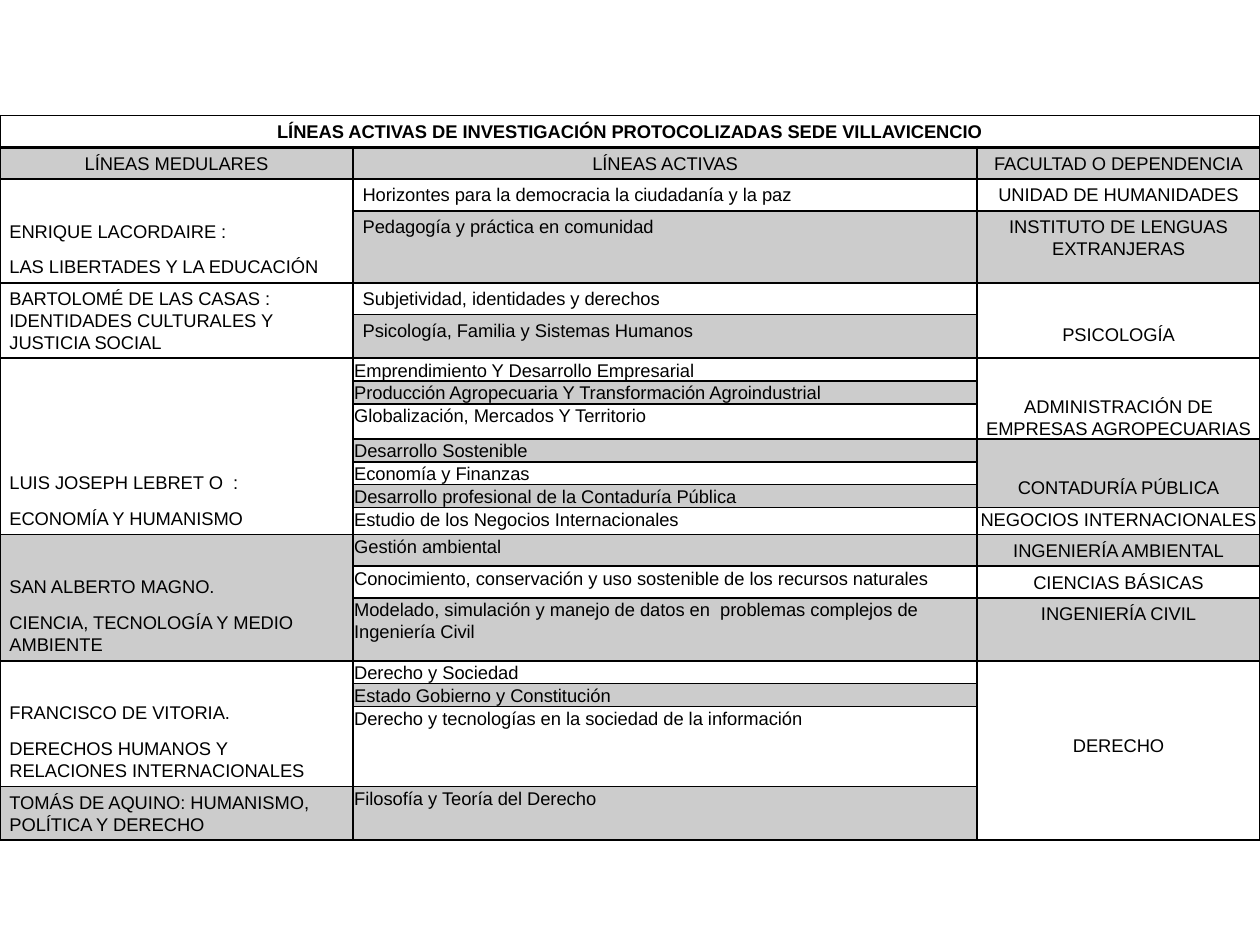
from lxml import etree
from pptx import Presentation
from pptx.dml.color import RGBColor
from pptx.enum import text
from pptx.oxml.ns import qn
from pptx.util import Cm, Pt

THEME = dict(font="Arial", size=10.5, ink="000000", shade_alpha=20,
             line_spacing=1.07, gap=8, rule=1, heavy_rule=2)
WIDE, NARROW = (0.19, 0.1), (0.02, 0.02)
SKIPPED_LINE = 0.73

TITLE = "LÍNEAS ACTIVAS DE INVESTIGACIÓN PROTOCOLIZADAS SEDE VILLAVICENCIO"
WIDTHS = [7.12, 12.58, 5.7]
HEIGHTS = [0.64, 0.61, 0.61, 1.44, 0.61, 0.88, 0.46, 0.46, 0.69, 0.46,
           0.46, 0.46, 0.51, 0.62, 0.61, 1.27, 0.46, 0.45, 1.6, 1.07]

# rows spanned, lines skipped above the text, margins, paragraphs
MEDULARES = [
    (1, 0, WIDE, ["LÍNEAS MEDULARES"]),
    (2, 1, WIDE, ["ENRIQUE LACORDAIRE :", "LAS LIBERTADES Y LA EDUCACIÓN"]),
    (2, 0, WIDE, ["BARTOLOMÉ DE LAS CASAS : IDENTIDADES CULTURALES Y JUSTICIA SOCIAL"]),
    (7, 3, WIDE, ["LUIS JOSEPH LEBRET O  :", "ECONOMÍA Y HUMANISMO"]),
    (3, 1, WIDE, ["SAN ALBERTO MAGNO.", "CIENCIA, TECNOLOGÍA Y MEDIO AMBIENTE"]),
    (3, 1, WIDE, ["FRANCISCO DE VITORIA.", "DERECHOS HUMANOS Y RELACIONES INTERNACIONALES"]),
    (1, 0, WIDE, ["TOMÁS DE AQUINO: HUMANISMO, POLÍTICA Y DERECHO"]),
]
ACTIVAS = [(1, 0, WIDE, [linea]) for linea in (
    "LÍNEAS ACTIVAS",
    "Horizontes para la democracia la ciudadanía y la paz",
    "Pedagogía y práctica en comunidad",
    "Subjetividad, identidades y derechos",
    "Psicología, Familia y Sistemas Humanos",
)] + [(1, 0, NARROW, [linea]) for linea in (
    "Emprendimiento Y Desarrollo Empresarial",
    "Producción Agropecuaria Y Transformación Agroindustrial",
    "Globalización, Mercados Y Territorio",
    "Desarrollo Sostenible",
    "Economía y Finanzas",
    "Desarrollo profesional de la Contaduría Pública",
    "Estudio de los Negocios Internacionales",
    "Gestión ambiental",
    "Conocimiento, conservación y uso sostenible de los recursos naturales",
    "Modelado, simulación y manejo de datos en  problemas complejos de Ingeniería Civil",
    "Derecho y Sociedad",
    "Estado Gobierno y Constitución",
    "Derecho y tecnologías en la sociedad de la información",
    "Filosofía y Teoría del Derecho",
)]
FACULTADES = [
    (1, 0, WIDE, ["FACULTAD O DEPENDENCIA"]),
    (1, 0, WIDE, ["UNIDAD DE HUMANIDADES"]),
    (1, 0, WIDE, ["INSTITUTO DE LENGUAS EXTRANJERAS"]),
    (2, 1, WIDE, ["PSICOLOGÍA"]),
    (3, 1, NARROW, ["ADMINISTRACIÓN DE EMPRESAS AGROPECUARIAS"]),
    (3, 1, NARROW, ["CONTADURÍA PÚBLICA"]),
    (1, 0, NARROW, ["NEGOCIOS INTERNACIONALES"]),
    (1, 0, WIDE, ["INGENIERÍA AMBIENTAL"]),
    (1, 0, WIDE, ["CIENCIAS BÁSICAS"]),
    (1, 0, WIDE, ["INGENIERÍA CIVIL"]),
    (4, 2, NARROW, ["DERECHO"]),
]


def write(cell, paragraphs, centered=False, bold=False, margins=WIDE, skipped=0):
    side, top = margins
    cell.margin_left = cell.margin_right = Cm(side)
    cell.margin_top = Cm(top + skipped * SKIPPED_LINE)
    cell.margin_bottom = Cm(0.1 if margins == WIDE else 0)
    cell.vertical_anchor = text.MSO_ANCHOR.TOP
    for index, words in enumerate(paragraphs):
        frame = cell.text_frame
        paragraph = frame.add_paragraph() if index else frame.paragraphs[0]
        paragraph.alignment = text.PP_ALIGN.CENTER if centered else text.PP_ALIGN.LEFT
        paragraph.line_spacing = THEME["line_spacing"]
        if index:
            paragraph.space_before = Pt(THEME["gap"])
        run = paragraph.add_run()
        run.text = words
        run.font.name = THEME["font"]
        run.font.size = Pt(THEME["size"])
        run.font.bold = bold
        run.font.color.rgb = RGBColor.from_string(THEME["ink"])


def rule_and_shade(cell, row):
    properties = cell._tc.get_or_add_tcPr()
    for edge in ("lnL", "lnR", "lnT", "lnB"):
        heavy = (row, edge) in ((0, "lnB"), (1, "lnT"))
        width = THEME["heavy_rule"] if heavy else THEME["rule"]
        line = etree.SubElement(properties, qn("a:" + edge), w=str(Pt(width)))
        paint = etree.SubElement(line, qn("a:solidFill"))
        etree.SubElement(paint, qn("a:srgbClr"), val=THEME["ink"])
    if row % 2:
        cell.fill.solid()
        cell.fill.fore_color.rgb = RGBColor.from_string(THEME["ink"])
        color = properties.find(qn("a:solidFill")).find(qn("a:srgbClr"))
        etree.SubElement(color, qn("a:alpha"), val=str(THEME["shade_alpha"] * 1000))
    else:
        cell.fill.background()


def main():
    deck = Presentation()
    deck.slide_width, deck.slide_height = Cm(25.4), Cm(19.05)
    slide = deck.slides.add_slide(deck.slide_layouts[6])
    table = slide.shapes.add_table(len(HEIGHTS), len(WIDTHS), Cm(0), Cm(2.33),
                                   Cm(sum(WIDTHS)), Cm(sum(HEIGHTS))).table
    table.first_row = table.horz_banding = False
    for column, width in zip(table.columns, WIDTHS):
        column.width = Cm(width)
    for row, height in zip(table.rows, HEIGHTS):
        row.height = Cm(height)

    table.cell(0, 0).merge(table.cell(0, 2))
    write(table.cell(0, 0), [TITLE], centered=True, bold=True)
    for column in range(len(WIDTHS)):
        rule_and_shade(table.cell(0, column), 0)

    for column, entries in enumerate((MEDULARES, ACTIVAS, FACULTADES)):
        start = 1
        for span, skipped, margins, paragraphs in entries:
            cell = table.cell(start, column)
            if span > 1:
                cell.merge(table.cell(start + span - 1, column))
            write(cell, paragraphs, centered=start == 1 or column == 2,
                  margins=margins, skipped=skipped)
            for row in range(start, start + span):
                rule_and_shade(table.cell(row, column), start)
            start += span

    deck.save("out.pptx")


if __name__ == "__main__":
    main()
